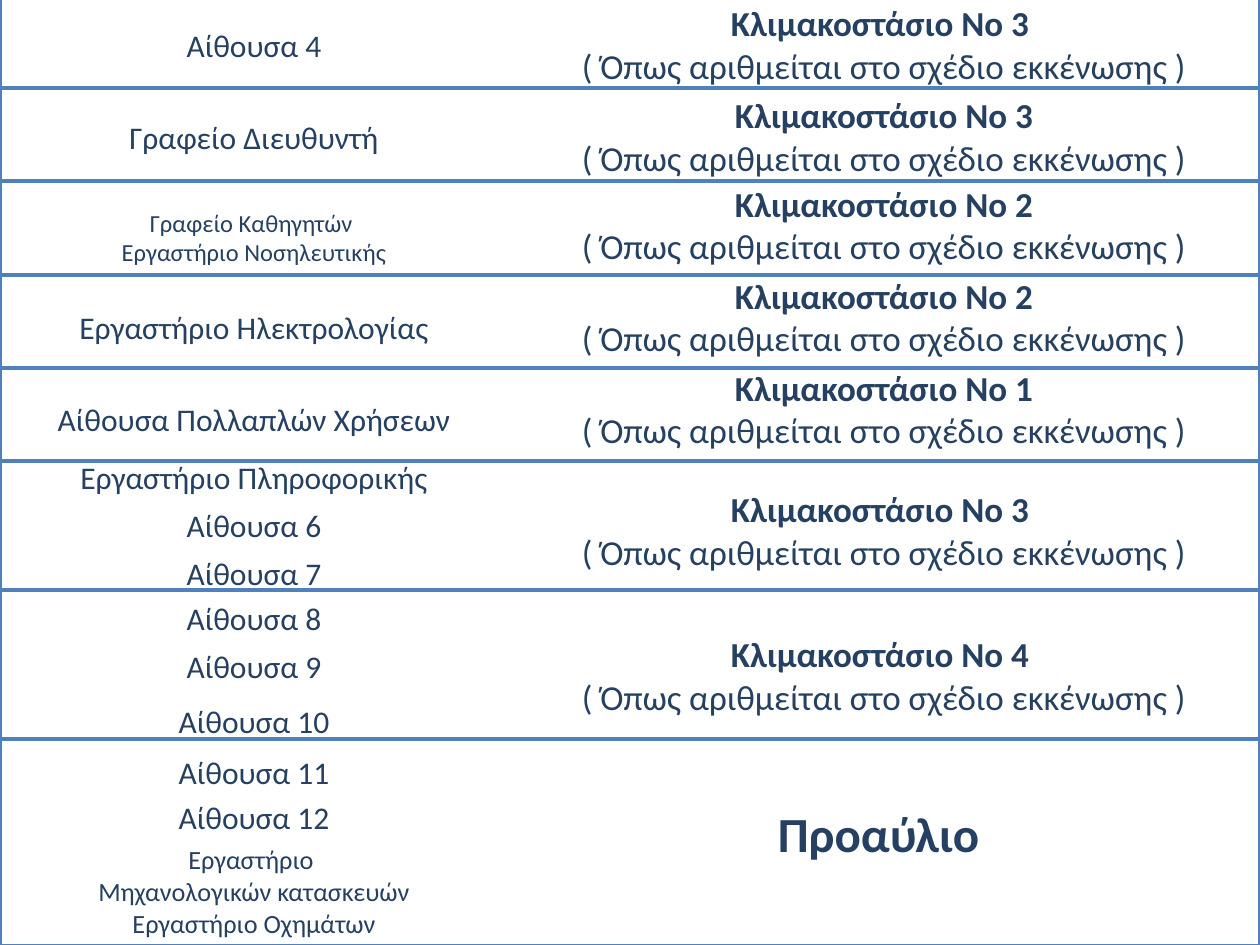
from itertools import pairwise

from pptx import Presentation
from pptx.dml.color import RGBColor
from pptx.enum.shapes import MSO_SHAPE
from pptx.enum.text import MSO_ANCHOR, PP_ALIGN
from pptx.util import Pt

RECT = MSO_SHAPE.RECTANGLE
CENTER = PP_ALIGN.CENTER
TOP = MSO_ANCHOR.TOP
NAVY = RGBColor(0x25, 0x40, 0x61)
BLUE = RGBColor(0x4F, 0x81, 0xBD)
FONT = "Calibri"
NOTE = "( Όπως αριθμείται στο σχέδιο εκκένωσης )"


def px(n):
    return round(n * 914400 / 126)


def write(cell, lines, size=18, bold_first=False, top=0, side=9):
    cell.margin_left = cell.margin_right = px(side)
    cell.margin_top, cell.margin_bottom = px(top), 0
    cell.vertical_anchor = TOP
    tf = cell.text_frame
    for i, line in enumerate(lines):
        p = tf.paragraphs[0] if i == 0 else tf.add_paragraph()
        p.alignment = CENTER
        r = p.add_run()
        r.text = line
        r.font.name = FONT
        r.font.size = Pt(size)
        r.font.bold = bold_first and i == 0
        r.font.color.rgb = NAVY


prs = Presentation()
prs.slide_width, prs.slide_height = px(1260), px(945)
slide = prs.slides.add_slide(prs.slide_layouts[6])

# Rooms: height, lines, size, top margin, side margin
rooms = [
    (92, ["Αίθουσα 4"], 18, 28, 15),
    (88, ["Γραφείο Διευθυντή"], 18, 28, 15),
    (92, ["Γραφείο Καθηγητών ", "Εργαστήριο Νοσηλευτικής"], 14, 28, 15),
    (92, ["Εργαστήριο Ηλεκτρολογίας"], 18, 37, 15),
    (92, ["Αίθουσα Πολλαπλών Χρήσεων"], 18, 37, 15),
    (48, ["Εργαστήριο Πληροφορικής"], 18, 3, 15),
    (48, ["Αίθουσα 6"], 18, 3, 15),
    (48, ["Αίθουσα 7"], 18, 3, 15),
    (45, ["Αίθουσα 8"], 18, 0, 9),
    (55, ["Αίθουσα 9"], 18, 3, 15),
    (54, ["Αίθουσα 10"], 18, 3, 15),
    (45, ["Αίθουσα 11"], 18, 0, 9),
    (45, ["Αίθουσα 12"], 18, 0, 9),
    (57, ["Εργαστήριο ", "Μηχανολογικών κατασκευών"], 15, 0, 9),
    (45, ["Εργαστήριο Οχημάτων"], 15, 0, 9),
]

# Exits: first row, rows spanned, lines, size, top margin, side margin
exits = [
    (0, 1, ["Κλιμακοστάσιο Νο 3 ", NOTE], 20, 3, 15),
    (1, 1, ["Κλιμακοστάσιο Νο 3", NOTE], 20, 3, 15),
    (2, 1, ["Κλιμακοστάσιο Νο 2", NOTE], 20, 3, 15),
    (3, 1, ["Κλιμακοστάσιο Νο 2", NOTE], 20, 3, 15),
    (4, 1, ["Κλιμακοστάσιο Νο 1", NOTE], 20, 3, 15),
    (5, 3, ["Κλιμακοστάσιο Νο 3 ", NOTE], 20, 33, 20),
    (8, 3, ["Κλιμακοστάσιο Νο 4 ", NOTE], 20, 34, 9),
    (11, 4, ["Προαύλιο "], 28, 51, 9),
]

# Table
height = sum(room[0] for room in rooms)
table = slide.shapes.add_table(len(rooms), 2, 0, 0, px(1260), px(height)).table
table.first_row = table.horz_banding = False
table.columns[0].width, table.columns[1].width = px(508), px(752)
for cell in table.iter_cells():
    cell.fill.background()
    cell.margin_top = cell.margin_bottom = 0

for i, (h, lines, size, top, side) in enumerate(rooms):
    table.rows[i].height = px(h)
    write(table.cell(i, 0), lines, size=size, top=top, side=side)

for row, span, lines, size, top, side in exits:
    cell = table.cell(row, 1)
    if span > 1:
        cell.merge(table.cell(row + span - 1, 1))
    write(cell, lines, size=size, bold_first=True, top=top, side=side)

# Frames around each group of rows
edges = [-4, 88, 181, 275, 368, 461, 590, 739, 946]
for top, bottom in pairwise(edges):
    sp = slide.shapes.add_shape(RECT, 0, px(top), px(1260), px(bottom - top))
    sp.shadow.inherit = False
    sp.fill.background()
    sp.line.color.rgb = BLUE
    sp.line.width = Pt(2)

prs.save("out.pptx")
